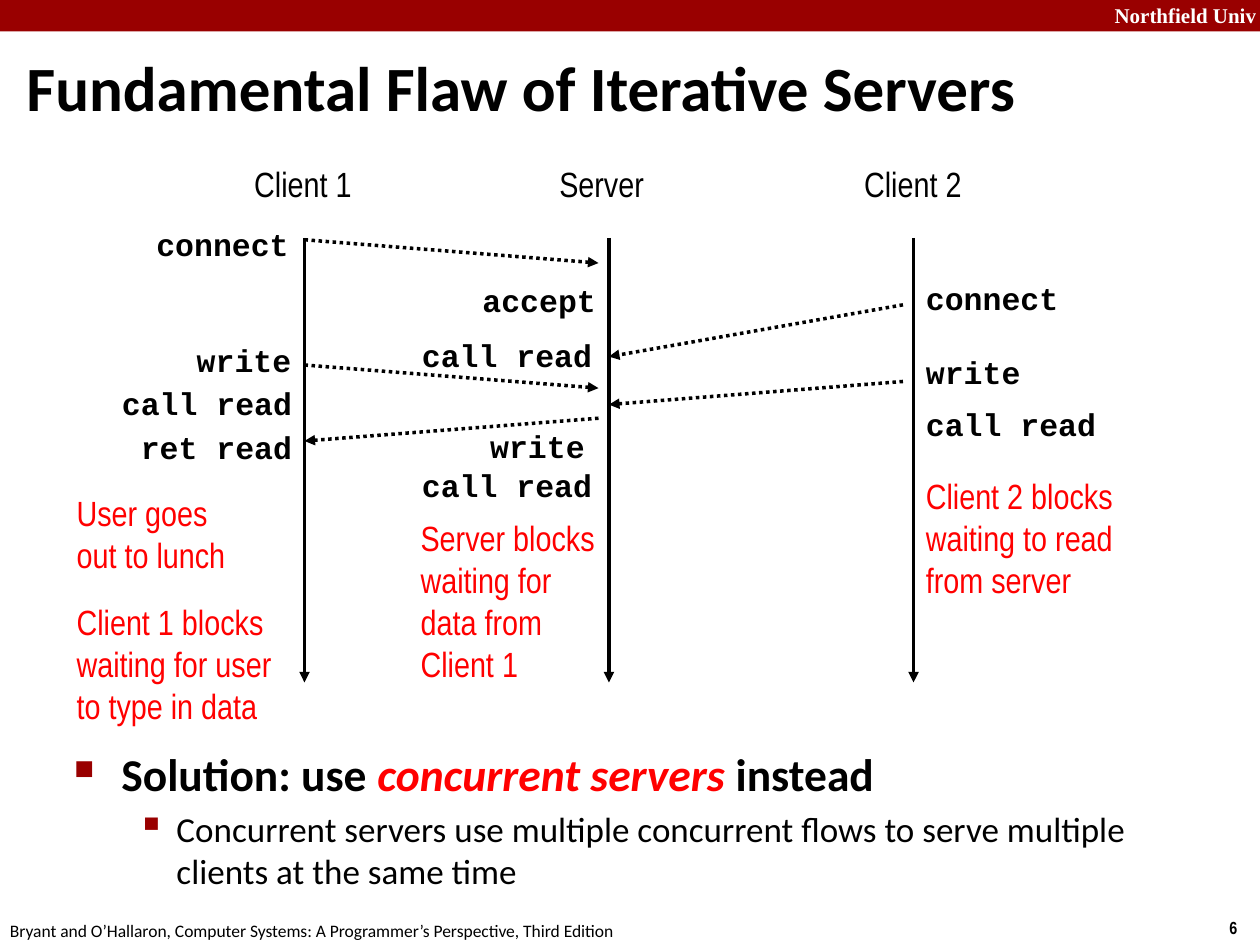
from lxml import etree
from pptx import Presentation
from pptx import util as u
from pptx.dml.color import RGBColor
from pptx.enum import dml, shapes, text
from pptx.oxml.ns import qn

Pt = u.Pt
COLORS = {"banner": "990000", "text": "000000", "alert": "FF0000", "light": "FFFFFF"}
SANS, NARROW, MONO, SERIF = "Calibri", "Arial Narrow", "Courier New", "Times New Roman"
LEFT, RIGHT = text.PP_ALIGN.LEFT, text.PP_ALIGN.RIGHT

# Content: all lengths in points
TITLE = "Fundamental Flaw of Iterative Servers"
FOOTER = "Bryant and O’Hallaron, Computer Systems: A Programmer’s Perspective, Third Edition"
TIMELINE_X = [174, 348, 522]
TIMELINE_TOP, TIMELINE_BOTTOM = 136, 390
HEADINGS = [("Client 1", 138.2, 70.6), ("Server", 312.5, 63.4), ("Client 2", 486.7, 70.6)]
# Calls: text, anchored edge, top, alignment
CALLS = [
    ("connect", 172, 125.3, RIGHT), ("write", 173.5, 191.5, RIGHT),
    ("call read", 174, 216, RIGHT), ("ret read", 174, 241.2, RIGHT),
    ("accept", 268.6, 157, LEFT), ("call read", 234, 188.6, LEFT),
    ("write", 273, 240.5, LEFT), ("call read", 234, 262.8, LEFT),
    ("connect", 522, 156.2, LEFT), ("write", 522, 198, LEFT),
    ("call read", 522, 228.2, LEFT),
]
# Messages: start x, start y, end x, end y
MESSAGES = [
    (174, 137, 342, 150.3), (516, 174.2, 348, 203.8), (174, 208.6, 342, 221.8),
    (516, 218, 348, 231.2), (342, 239, 174, 252),
]
# Notes: lines, box
NOTES = [
    (["User goes", "out to lunch", "Client 1 blocks", "waiting for user", "to type in data"],
     (36.7, 277.2, 126.7, 145.4)),
    (["Client 2 blocks", "waiting to read", "from server"], (522, 267.8, 122.4, 80)),
    (["Server blocks", "waiting for", "data from", "Client 1"], (233.3, 291.6, 115.2, 104.4)),
]
SOLUTION = [("Solution: use ", "text", False), ("concurrent servers ", "alert", True),
            ("instead", "text", False)]
DETAIL = ("Concurrent servers use multiple concurrent flows to serve multiple "
          "clients at the same time")


def color(name):
    return RGBColor.from_string(COLORS[name])


def format_run(run, font, size, color_name="text", bold=False, italic=False):
    run.font.name, run.font.size = font, Pt(size)
    run.font.bold, run.font.italic = bold, italic
    run.font.color.rgb = color(color_name)


def add_text(slide, lines, box, font, size, color_name="text", bold=False,
             align=LEFT, wrap=False):
    shape = slide.shapes.add_textbox(*map(Pt, box))
    frame = shape.text_frame
    frame.text = "\n".join(lines)
    frame.word_wrap = wrap
    frame.auto_size = text.MSO_AUTO_SIZE.SHAPE_TO_FIT_TEXT
    for paragraph in frame.paragraphs:
        paragraph.alignment = align
        format_run(paragraph.runs[0], font, size, color_name, bold)
    return shape


def add_arrow(collection, x1, y1, x2, y2, dotted=False):
    line = collection.add_connector(shapes.MSO_CONNECTOR.STRAIGHT, *map(Pt, (x1, y1, x2, y2)))
    line.line.color.rgb = color("text")
    line.line.width = Pt(2)
    if dotted:
        line.line.dash_style = dml.MSO_LINE.ROUND_DOT
    etree.SubElement(line.line._get_or_add_ln(), qn("a:tailEnd"), type="triangle")
    etree.SubElement(line._element.spPr, qn("a:effectLst"))


def set_bullet(paragraph, character, percent, margin, indent, space):
    paragraph.space_before = Pt(space)
    properties = paragraph._p.get_or_add_pPr()
    properties.set("marL", str(Pt(margin)))
    properties.set("indent", str(Pt(-indent)))
    bullet_color = etree.SubElement(properties, qn("a:buClr"))
    etree.SubElement(bullet_color, qn("a:srgbClr"), val=COLORS["banner"])
    etree.SubElement(properties, qn("a:buSzPct"), val=str(percent * 1000))
    etree.SubElement(properties, qn("a:buChar"), char=character)


def add_frame(slide):
    # Banner, title, footer and page number
    banner = slide.shapes.add_shape(shapes.MSO_SHAPE.RECTANGLE, 0, 0, Pt(720), Pt(18))
    banner.shadow.inherit = False
    banner.fill.solid()
    banner.fill.fore_color.rgb = color("banner")
    banner.line.fill.background()
    add_text(slide, ["Northfield Univ"], (622, -2.2, 103, 21.6), SERIF, 12, "light", True,
             RIGHT, wrap=True)
    add_text(slide, ["6"], (695.5, 520.6, 24.5, 19.4), NARROW, 10, bold=True)
    add_text(slide, [FOOTER], (-1.4, 522, 365.8, 19.4), SANS, 10)

    title = slide.shapes.title
    title.left, title.top, title.width, title.height = map(Pt, (7.9, 26.6, 707.8, 45.4))
    title.text_frame.text = TITLE
    title.text_frame.vertical_anchor = text.MSO_ANCHOR.MIDDLE
    title.text_frame.paragraphs[0].alignment = LEFT
    format_run(title.text_frame.paragraphs[0].runs[0], SANS, 36, bold=True)


def add_diagram(slide):
    # Timelines and their headings
    timelines = slide.shapes.add_group_shape()
    for x in TIMELINE_X:
        add_arrow(timelines.shapes, x, TIMELINE_TOP, x, TIMELINE_BOTTOM)
    for label, left, width in HEADINGS:
        add_text(slide, [label], (left, 89.3, width, 31.7), NARROW, 20)

    # Messages and calls
    for message in MESSAGES:
        add_arrow(slide.shapes, *message, dotted=True)
    for label, edge, top, align in CALLS:
        width = 10.8 * len(label) + 14.4
        left = edge - width if align == RIGHT else edge
        add_text(slide, [label], (left, top, width, 28.8), MONO, 18, bold=True, align=align)

    # Red notes; the first one holds two remarks
    notes = [add_text(slide, lines, box, NARROW, 20, "alert") for lines, box in NOTES]
    notes[0].text_frame.paragraphs[2].space_before = Pt(14.4)


def add_solution(slide):
    frame = slide.shapes.add_textbox(*map(Pt, (35.3, 422.6, 666.7, 90.7))).text_frame
    frame.word_wrap = True
    heading, detail = frame.paragraphs[0], frame.add_paragraph()
    set_bullet(heading, "■", 60, 27, 27, 5.2)
    for words, color_name, italic in SOLUTION:
        run = heading.add_run()
        run.text = words
        format_run(run, SANS, 26, color_name, True, italic)
    detail.text = DETAIL
    detail.level = 1
    set_bullet(detail, "▪", 110, 58.5, 22.5, 4)
    format_run(detail.runs[0], SANS, 20)


def main():
    presentation = Presentation()
    presentation.slide_width, presentation.slide_height = Pt(720), Pt(540)
    slide = presentation.slides.add_slide(presentation.slide_layouts[5])
    add_frame(slide)
    add_diagram(slide)
    add_solution(slide)
    presentation.save("out.pptx")


if __name__ == "__main__":
    main()
